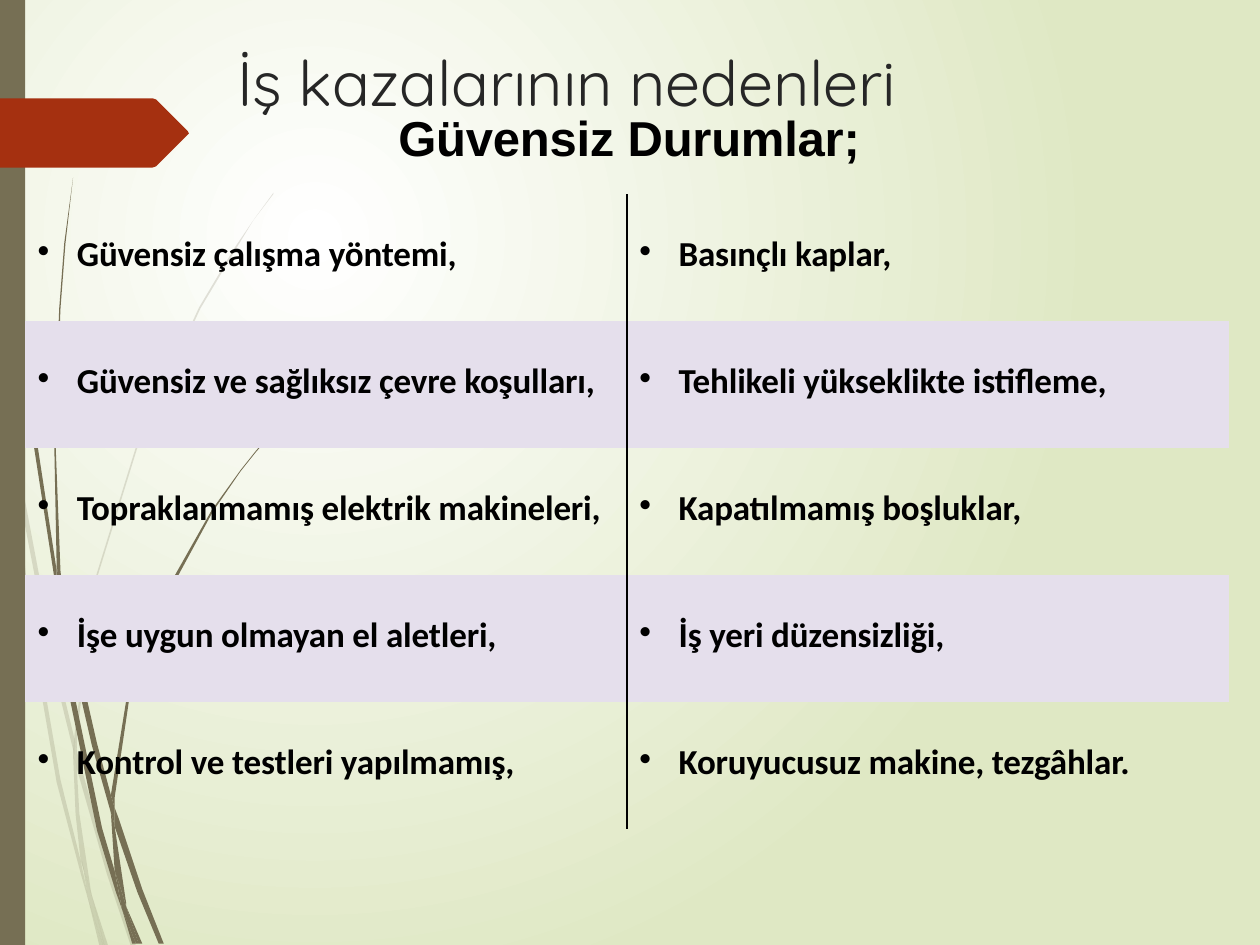
from pptx import Presentation
from pptx.dml.color import RGBColor
from pptx.enum.shapes import MSO_SHAPE
from pptx.enum.text import MSO_ANCHOR, MSO_AUTO_SIZE, PP_ALIGN
from pptx.oxml import parse_xml
from pptx.oxml.ns import nsdecls, qn
from pptx.util import Cm, Pt
from lxml import etree

RECT = MSO_SHAPE.RECTANGLE
TOP, MIDDLE = MSO_ANCHOR.TOP, MSO_ANCHOR.MIDDLE
FIXED = MSO_AUTO_SIZE.NONE
LEFT = PP_ALIGN.LEFT

TITLE = "İş kazalarının nedenleri"
HEAD = "Güvensiz Durumlar;"
ROWS = [
    ("Güvensiz çalışma yöntemi,", "Basınçlı kaplar,"),
    ("Güvensiz ve sağlıksız çevre koşulları,", "Tehlikeli yükseklikte istifleme,"),
    ("Topraklanmamış elektrik makineleri,", "Kapatılmamış boşluklar,"),
    ("İşe uygun olmayan el aletleri,", "İş yeri düzensizliği,"),
    ("Kontrol ve testleri yapılmamış,", "Koruyucusuz makine, tezgâhlar."),
]

THEME = {
    "title": dict(font="Quicksand", size=36, color="262626"),
    "head": dict(font="Arial", size=28, color="000000", bold=True),
    "item": dict(font="Calibri", size=20, color="000000", bold=True),
    "grass": "766F54", "ribbon": "A53010", "band": "E5DFEC",
    "rule": "000000", "glow": "FFFFFF", "edge": "DFE8C4",
}

# Outlines in hundredths of an inch
UNIT = Cm(0.0254)
PALE = [
    [(8, 350), (6, 322), (0, 282), (0, 299), (7, 344)],
    [(40, 522), (59, 599), (59, 586), (43, 520), (10, 345), (12, 376)],
    [(64, 607), (61, 596), (61, 610), (85, 694), (104, 751), (108, 751), (88, 692)],
    [(83, 751), (86, 751), (73, 711)],
    [(64, 683), (48, 619), (22, 469), (12, 376), (8, 350), (19, 470),
     (45, 621), (64, 693), (70, 714), (69, 707)],
    [(58, 599), (60, 646), (64, 683), (67, 692), (73, 711), (72, 706),
     (63, 646), (61, 610), (61, 608)],
    [(61, 584), (76, 462), (111, 349), (159, 245), (187, 198), (201, 175),
     (217, 154), (217, 153), (201, 175), (186, 197), (158, 244), (110, 348),
     (75, 461), (59, 584), (59, 586), (61, 596)],
    [(70, 714), (79, 751), (82, 751)],
    [(61, 608), (61, 610), (61, 596), (59, 586), (58, 599)],
    [(67, 692), (65, 683), (69, 707), (70, 714), (82, 751), (83, 751), (73, 711)],
]
DARK = [
    [(5, 110), (14, 233), (27, 355), (46, 477), (47, 481), (45, 457), (45, 453),
     (30, 355), (15, 232), (6, 109), (4, 48), (3, 0), (2, 0), (3, 48)],
    [(73, 592), (88, 645), (88, 633), (88, 631), (77, 590), (50, 472), (53, 505)],
    [(94, 649), (91, 641), (91, 656), (109, 708), (126, 749), (130, 749), (113, 706)],
    [(91, 691), (81, 657), (60, 556), (53, 505), (47, 477), (56, 557),
     (77, 659), (92, 708), (97, 722), (96, 717)],
    [(50, 472), (48, 453), (44, 349), (48, 245), (52, 193), (58, 141),
     (51, 193), (47, 245), (43, 349), (45, 449), (49, 472)],
    [(110, 749), (113, 749), (100, 719)],
    [(47, 477), (53, 505), (50, 472), (49, 472), (45, 449), (45, 453)],
    [(91, 633), (103, 552), (131, 476), (169, 406), (191, 374), (203, 359),
     (216, 344), (215, 344), (203, 358), (191, 373), (168, 405), (129, 474),
     (101, 551), (88, 631), (91, 641)],
    [(97, 722), (105, 749), (108, 749)],
    [(88, 645), (91, 691), (96, 706), (100, 719), (100, 716), (91, 656), (90, 651)],
    [(88, 645), (90, 651), (91, 656), (91, 641), (88, 631), (88, 633)],
    [(96, 706), (91, 691), (96, 717), (97, 722), (108, 749), (110, 749), (100, 719)],
]
RIBBON = [(0, 78), (121, 78), (124, 79), (149, 104), (150, 105.5), (149, 107),
          (124, 132), (121, 133), (0, 133)]


def paint(shape, color, alpha=None):
    shape.shadow.inherit = False
    shape.fill.solid()
    shape.fill.fore_color.rgb = RGBColor.from_string(color)
    shape.line.fill.background()
    if alpha:
        tone = shape.element.spPr.find(".//" + qn("a:srgbClr"))
        etree.SubElement(tone, qn("a:alpha")).set("val", str(alpha * 1000))


def draw(shapes, points, color, alpha=None):
    pen = shapes.build_freeform(*points[0], scale=UNIT)
    pen.add_line_segments(points[1:], close=True)
    paint(pen.convert_to_shape(), color, alpha)


def write(frame, text, font, size, color, bold=False, track=-0.1, before=0):
    """Put one left-aligned paragraph into a frame and return it."""
    para = frame.paragraphs[0]
    para.alignment = LEFT
    para.space_before = Pt(before)
    run = para.add_run()
    run.text = text
    run.font.name, run.font.size, run.font.bold = font, Pt(size), bold
    run.font.color.rgb = RGBColor.from_string(color)
    run.font._element.set("spc", str(round(track * 100)))
    return para


def trim(frame):
    frame.margin_left = frame.margin_right = frame.margin_bottom = 0
    frame.margin_top = Cm(0.03)
    frame.vertical_anchor, frame.auto_size = TOP, FIXED
    frame.word_wrap = True


def place(shape, left, top, width, height):
    shape.left, shape.top = Cm(left), Cm(top)
    shape.width, shape.height = Cm(width), Cm(height)


def bullet(para):
    props = para._p.get_or_add_pPr()
    props.set("marL", str(Cm(1.04)))
    props.set("indent", str(Cm(-0.79)))
    etree.SubElement(props, qn("a:buChar")).set("char", "•")


def border(cell, side):
    cell._tc.get_or_add_tcPr().insert(0, parse_xml(
        f'<a:{side} {nsdecls("a")} w="{Pt(1)}"><a:solidFill>'
        f'<a:srgbClr val="{THEME["rule"]}"/></a:solidFill></a:{side}>'))


def backdrop(slide):
    slide.element.cSld.insert(0, parse_xml(
        f'<p:bg {nsdecls("p", "a")}><p:bgPr><a:gradFill><a:gsLst>'
        f'<a:gs pos="0"><a:srgbClr val="{THEME["glow"]}"/></a:gs>'
        f'<a:gs pos="100000"><a:srgbClr val="{THEME["edge"]}"/></a:gs></a:gsLst>'
        '<a:path path="circle"><a:fillToRect l="50000" t="50000" r="100000"'
        ' b="100000"/></a:path></a:gradFill><a:effectLst/></p:bgPr></p:bg>'))


def grid(slide):
    wide, high = 12.13, 2.56
    frame = slide.shapes.add_table(len(ROWS), 2, Cm(0.51), Cm(3.92),
                                   Cm(2 * wide), Cm(high * len(ROWS)))
    table = frame.table
    table.first_row = table.horz_banding = False
    style = table._tbl.tblPr.find(qn("a:tableStyleId"))
    style.text = "{2D5ABB26-0587-4C30-8999-92F81FD0307C}"
    for col in table.columns:
        col.width = Cm(wide)
    for i, row in enumerate(ROWS):
        table.rows[i].height = Cm(high)
        for j, text in enumerate(row):
            cell = table.cell(i, j)
            cell.margin_left = cell.margin_right = cell.margin_top = 0
            cell.margin_bottom = Cm(0.12)
            cell.vertical_anchor = MIDDLE
            bullet(write(cell.text_frame, text, **THEME["item"]))
            if i % 2:
                cell.fill.solid()
                cell.fill.fore_color.rgb = RGBColor.from_string(THEME["band"])
            else:
                cell.fill.background()
            border(cell, ("lnR", "lnL")[j])


def main():
    deck = Presentation()
    deck.slide_width, deck.slide_height = Cm(25.4), Cm(19.05)
    slide = deck.slides.add_slide(deck.slide_layouts[5])
    shapes = slide.shapes
    backdrop(slide)
    for wisps, alpha in ((PALE, 20), (DARK, None)):
        group = shapes.add_group_shape()
        for points in wisps:
            draw(group.shapes, points, THEME["grass"], alpha)
    paint(shapes.add_shape(RECT, 0, 0, Cm(0.51), Cm(19.05)), THEME["grass"])
    draw(shapes, RIBBON, THEME["ribbon"])

    head = shapes.add_textbox(Cm(8.03), Cm(2.13), Cm(9.45), Cm(1.24))
    trim(head.text_frame)
    write(head.text_frame, HEAD, before=0.9, **THEME["head"])

    title = shapes.title
    place(title, 4.65, 0.84, 18.31, 3.56)
    trim(title.text_frame)
    title.text_frame.margin_left = Cm(0.13)
    write(title.text_frame, TITLE, before=1, **THEME["title"])
    shapes._spTree.append(title.element)

    grid(slide)
    deck.save("out.pptx")


if __name__ == "__main__":
    main()
